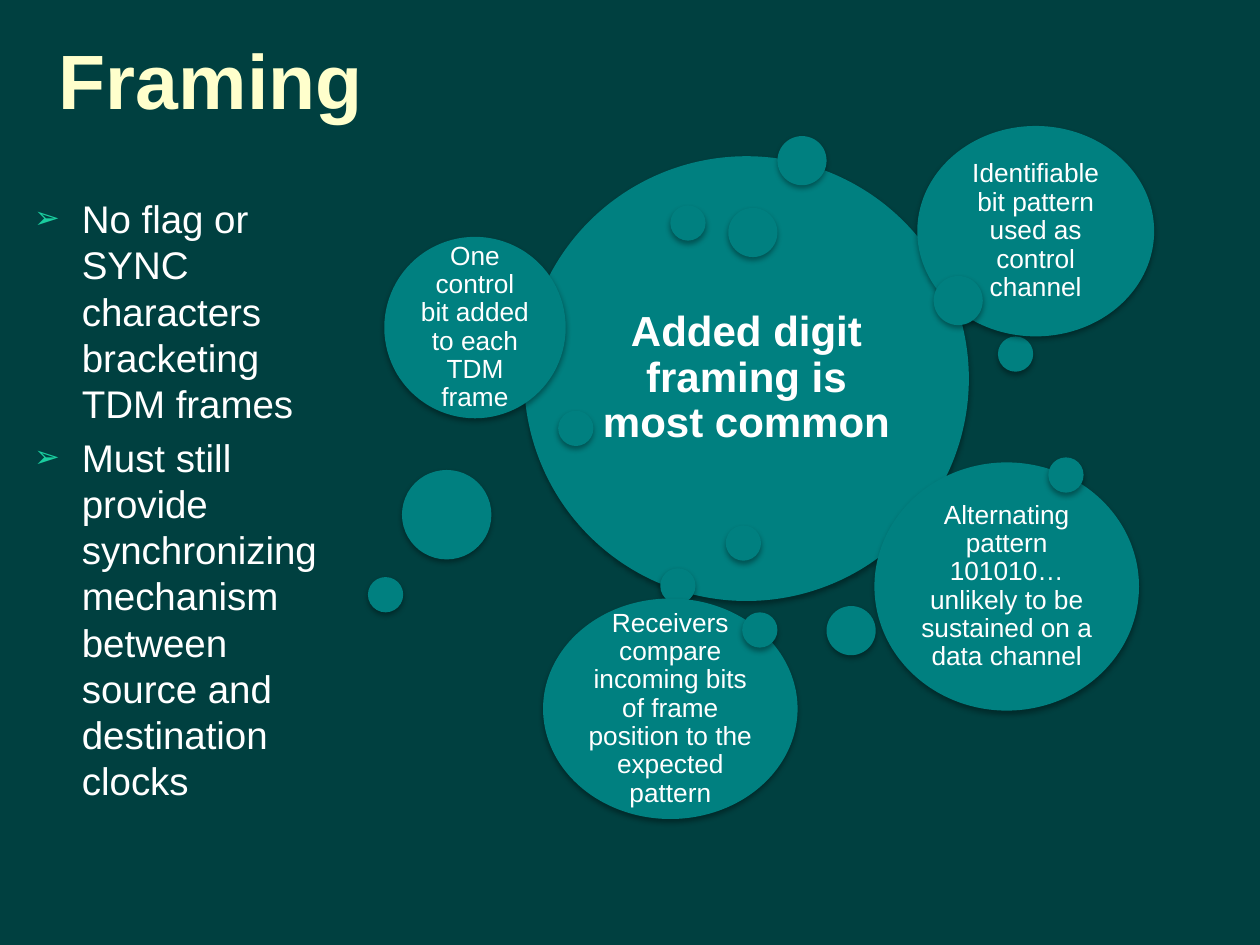
"""Build the Framing slide with its cluster of bubbles."""
from dataclasses import dataclass
from typing import Any

from lxml import etree
from pptx import Presentation
from pptx import util as u
from pptx.dml.color import RGBColor
from pptx.enum import shapes, text
from pptx.oxml import ns


@dataclass(frozen=True)
class Theme:
    """Colours, font and type sizes of the slide."""
    background: str = "004040"
    bubble: str = "008080"
    title: str = "FFFFCC"
    body: str = "FFFFFF"
    bullet: str = "1ACE9F"
    shadow: str = "000000"
    font: str = "Arial"
    title_size: int = 44
    body_size: int = 22
    hub_size: int = 24
    label_size: int = 15


@dataclass(frozen=True)
class Bubble:
    """An ellipse in inches, with an optional label."""
    left: float
    top: float
    width: float
    height: float
    label: str = ""
    size: int = Theme.label_size
    bold: bool = False
    inset: float = 0.06


THEME = Theme()
SMALL = (0.28, 0.28)
MEDIUM = (0.39, 0.39)

POINTS = (
    "No flag or SYNC characters bracketing TDM frames",
    "Must still provide synchronizing mechanism between source and destination clocks",
)

BUBBLES = (
    Bubble(4.16, 1.24, 3.53, 3.53, "Added digit framing is most common",
           THEME.hub_size, True, 0.1),
    Bubble(6.17, 1.08, *MEDIUM),
    Bubble(5.24, 4.51, *SMALL),
    Bubble(7.92, 2.67, *SMALL),
    Bubble(6.56, 4.81, *MEDIUM),
    Bubble(5.32, 1.63, *SMALL),
    Bubble(4.43, 3.26, *SMALL),
    Bubble(3.05, 1.88, 1.44, 1.44, "One control bit added to each TDM frame"),
    Bubble(5.78, 1.65, *MEDIUM),
    Bubble(3.19, 3.73, 0.71, 0.71),
    Bubble(7.28, 1, 1.88, 1.67, "Identifiable bit pattern used as control channel"),
    Bubble(7.41, 2.19, *MEDIUM),
    Bubble(2.92, 4.58, *SMALL),
    Bubble(5.76, 4.17, *SMALL),
    Bubble(6.94, 3.67, 2.1, 1.97,
           "Alternating pattern 101010…unlikely to be sustained on a data channel"),
    Bubble(8.32, 3.63, *SMALL),
    Bubble(4.31, 4.75, 2.02, 1.75,
           "Receivers compare incoming bits of frame position to the expected pattern"),
    Bubble(5.89, 4.86, *SMALL),
)


def apply(target: Any, values: dict[str, Any]) -> None:
    """Set every named attribute on the target."""
    for name, value in values.items():
        setattr(target, name, value)


def place(box: Any, left: float, top: float, width: float, height: float) -> None:
    """Move and size a box in inches."""
    apply(box, {"left": u.Inches(left), "top": u.Inches(top),
                "width": u.Inches(width), "height": u.Inches(height)})


def write(para: Any, words: str, size: int, color: str, bold: bool = False) -> None:
    """Add one formatted span to a paragraph."""
    span = para.add_run()
    span.text = words
    apply(span.font, {"name": THEME.font, "size": u.Pt(size), "bold": bold})
    span.font.color.rgb = RGBColor.from_string(color)


def add_node(parent: Any, tag: str, **values: Any) -> Any:
    """Append a DrawingML element with attributes."""
    attributes = {name: str(value) for name, value in values.items()}
    return etree.SubElement(parent, ns.qn(tag), attributes)


def add_bullet(para: Any) -> None:
    """Give a paragraph a hanging arrowhead bullet."""
    properties = para._p.get_or_add_pPr()
    indent = u.Inches(0.38)
    properties.set("marL", str(indent))
    properties.set("indent", str(-indent))
    add_node(add_node(properties, "a:buClr"), "a:srgbClr", val=THEME.bullet)
    add_node(properties, "a:buSzPct", val=80000)
    add_node(properties, "a:buFont", typeface=THEME.font)
    add_node(properties, "a:buChar", char="➢")


def add_shadow(shape: Any) -> None:
    """Cast a soft shadow straight below a shape."""
    shape.shadow.inherit = False
    effects = shape._element.spPr.find(ns.qn("a:effectLst"))
    shadow = add_node(effects, "a:outerShdw", blurRad=u.Pt(3.1), dist=u.Pt(1.8),
                      dir=5400000, rotWithShape=0)
    color = add_node(shadow, "a:srgbClr", val=THEME.shadow)
    add_node(color, "a:alpha", val=35000)


def draw_bubble(page: Any, bubble: Bubble) -> None:
    """Draw one bubble and its label."""
    bounds = (bubble.left, bubble.top, bubble.width, bubble.height)
    shape = page.shapes.add_shape(shapes.MSO_SHAPE.OVAL, *map(u.Inches, bounds))
    shape.fill.solid()
    shape.fill.fore_color.rgb = RGBColor.from_string(THEME.bubble)
    shape.line.fill.background()
    add_shadow(shape)
    if not bubble.label:
        return
    frame = shape.text_frame
    inset = u.Inches(bubble.inset)
    apply(frame, {"word_wrap": True, "vertical_anchor": text.MSO_ANCHOR.MIDDLE,
                  "margin_left": inset, "margin_right": inset,
                  "margin_top": inset, "margin_bottom": inset})
    para = frame.paragraphs[0]
    apply(para, {"alignment": text.PP_ALIGN.CENTER, "line_spacing": 0.9})
    write(para, bubble.label, bubble.size, THEME.body, bubble.bold)


def fill_title(box: Any) -> None:
    """Place and write the title."""
    place(box, 0.01, 0, 3.33, 1.25)
    frame = box.text_frame
    apply(frame, {"word_wrap": True, "auto_size": text.MSO_AUTO_SIZE.NONE,
                  "vertical_anchor": text.MSO_ANCHOR.MIDDLE})
    para = frame.paragraphs[0]
    para.alignment = text.PP_ALIGN.CENTER
    write(para, "Framing", THEME.title_size, THEME.title, True)


def fill_body(box: Any) -> None:
    """Place and write the bulleted list."""
    place(box, 0.17, 1.5, 2.67, 4.92)
    frame = box.text_frame
    apply(frame, {"word_wrap": True, "auto_size": text.MSO_AUTO_SIZE.NONE,
                  "vertical_anchor": text.MSO_ANCHOR.TOP})
    for index, point in enumerate(POINTS):
        para = frame.add_paragraph() if index else frame.paragraphs[0]
        para.space_before = u.Pt(THEME.body_size * 0.2)
        add_bullet(para)
        write(para, point, THEME.body_size, THEME.body)


def main() -> None:
    """Build and save the deck."""
    deck = Presentation()
    apply(deck, {"slide_width": u.Inches(10), "slide_height": u.Inches(7.5)})
    page = deck.slides.add_slide(deck.slide_layouts[1])
    page.background.fill.solid()
    page.background.fill.fore_color.rgb = RGBColor.from_string(THEME.background)
    fill_title(page.shapes.title)
    fill_body(page.placeholders[1])
    for bubble in BUBBLES:
        draw_bubble(page, bubble)
    deck.save("out.pptx")


if __name__ == "__main__":
    main()
